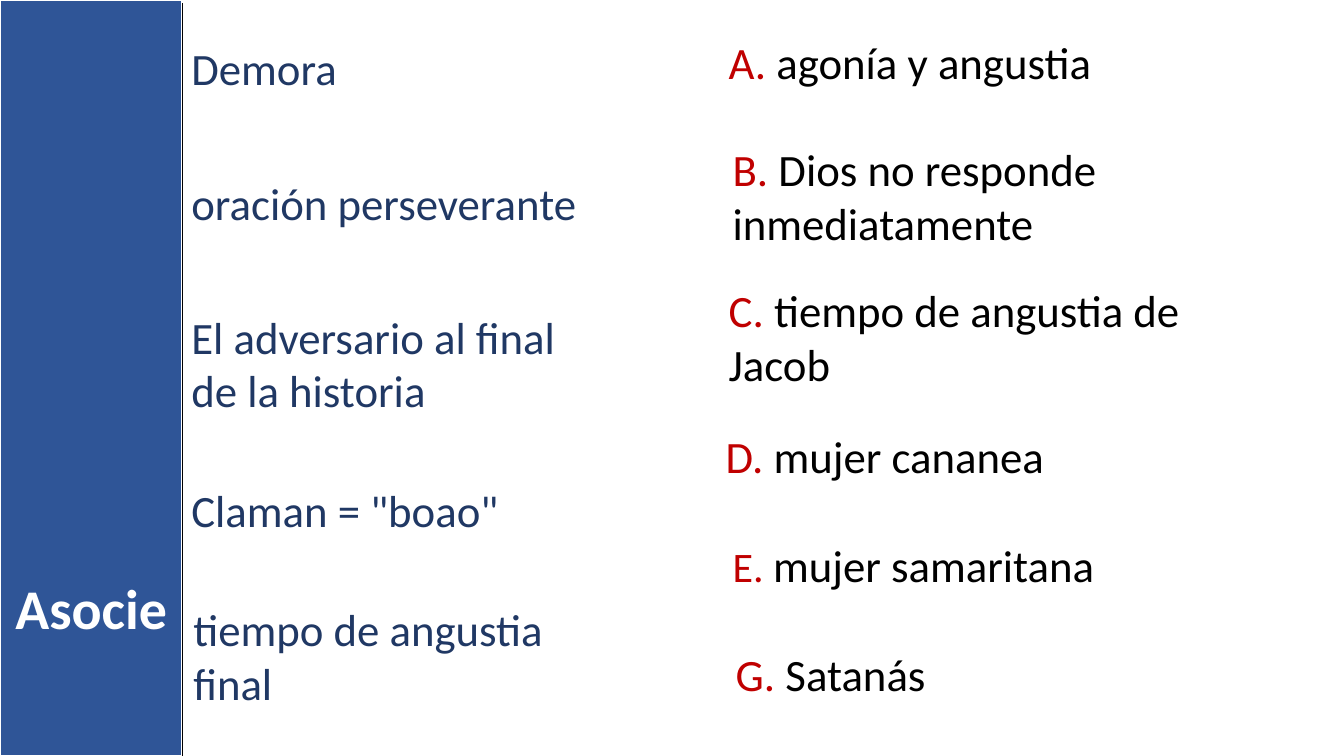
from pptx import Presentation
from pptx.dml.color import RGBColor
from pptx.enum.shapes import MSO_CONNECTOR, MSO_SHAPE
from pptx.enum.text import MSO_AUTO_SIZE, PP_ALIGN
from pptx.oxml.ns import qn
from pptx.util import Pt
from lxml.etree import SubElement

WHITE = RGBColor(0xFF, 0xFF, 0xFF)
BLACK = RGBColor(0, 0, 0)
BLUE = RGBColor(0x2F, 0x55, 0x97)
NAVY = RGBColor(0x20, 0x38, 0x64)
RED = RGBColor(0xC0, 0, 0)
BAND_WIDTH = 130.3
ONE_LINE, TWO_LINES = 46, 85

presentation = Presentation()
presentation.slide_width, presentation.slide_height = Pt(960), Pt(540)
slide = presentation.slides.add_slide(presentation.slide_layouts[6])


def add_text(left, top, width, height, text, size, color):
    box = slide.shapes.add_textbox(Pt(left), Pt(top), Pt(width), Pt(height))
    box.text_frame.word_wrap = True
    box.text_frame.auto_size = MSO_AUTO_SIZE.SHAPE_TO_FIT_TEXT
    paragraph = box.text_frame.paragraphs[0]
    paragraph.font.name = "Calibri"
    paragraph.font.size = Pt(size)
    paragraph.font.color.rgb = color
    paragraph.add_run().text = text
    return paragraph


# Blue side band
band = slide.shapes.add_shape(MSO_SHAPE.RECTANGLE, 0, 0, Pt(BAND_WIDTH), Pt(540))
band.shadow.inherit = False
band.fill.solid()
band.fill.fore_color.rgb = BLUE
band.line.color.rgb = WHITE
band.line.width = Pt(1.5)

# Terms to match
terms = [
    (129.6, 25.2, 319, ONE_LINE, "Demora"),
    (129.6, 121.7, 332.6, ONE_LINE, "oración perseverante"),
    (129.6, 217.4, 296, TWO_LINES, "El adversario al final de la historia"),
    (129.6, 341.3, 331.2, ONE_LINE, 'Claman = "boao"'),
    (131, 426.2, 317.5, TWO_LINES, "tiempo de angustia final"),
]
for left, top, width, height, term in terms:
    add_text(left, top, width, height, term, 32, NAVY)

# Lettered answers
answers = [
    (513.4, 20.9, 435.6, ONE_LINE, "A", 32, "agonía y angustia"),
    (516.2, 97.9, 426.2, TWO_LINES, "B", 32, "Dios no responde inmediatamente"),
    (513.4, 198.7, 413.3, TWO_LINES, "C", 32, "tiempo de angustia de Jacob"),
    (511.2, 302.4, 417.6, ONE_LINE, "D", 32, "mujer cananea"),
    (516.2, 380.2, 398.2, ONE_LINE, "E", 30, "mujer samaritana"),
    (518.4, 458.6, 402.5, ONE_LINE, "G", 32, "Satanás"),
]
for left, top, width, height, letter, letter_size, answer in answers:
    paragraph = add_text(left, top, width, height, f"{letter}. ", 32, BLACK)
    letter_font = paragraph.runs[0].font
    letter_font.size = Pt(letter_size)
    letter_font.color.rgb = RED
    paragraph.add_run().text = answer

# Title on the band
title = add_text(0, 406.1, BAND_WIDTH, 55.4, "Asocie", 40, WHITE)
title.alignment = PP_ALIGN.CENTER
title.font.bold = True

# Edge line beside the band
edge = slide.shapes.add_connector(
    MSO_CONNECTOR.STRAIGHT, Pt(BAND_WIDTH), Pt(2.2), Pt(BAND_WIDTH), Pt(540))
edge.line.color.rgb = BLACK
edge.line.width = Pt(1)
SubElement(edge._element.spPr, qn("a:effectLst"))

presentation.save("out.pptx")
